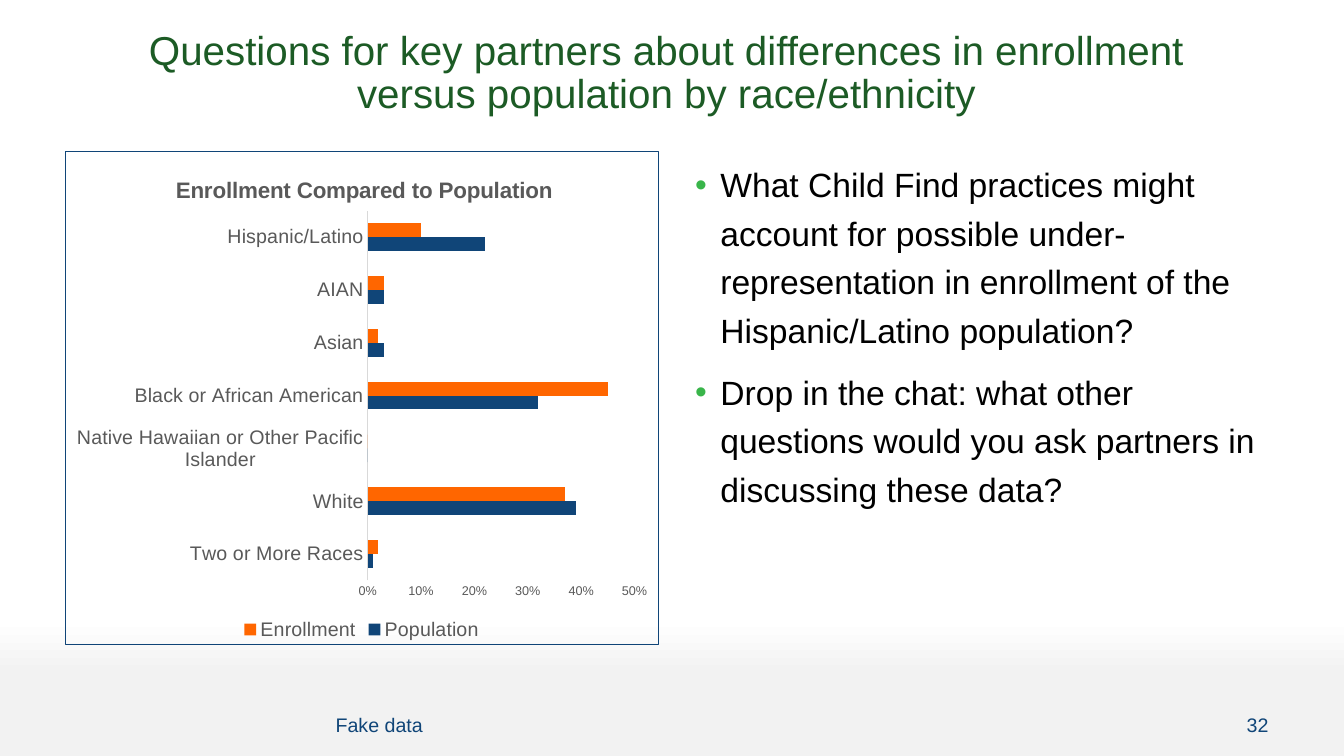
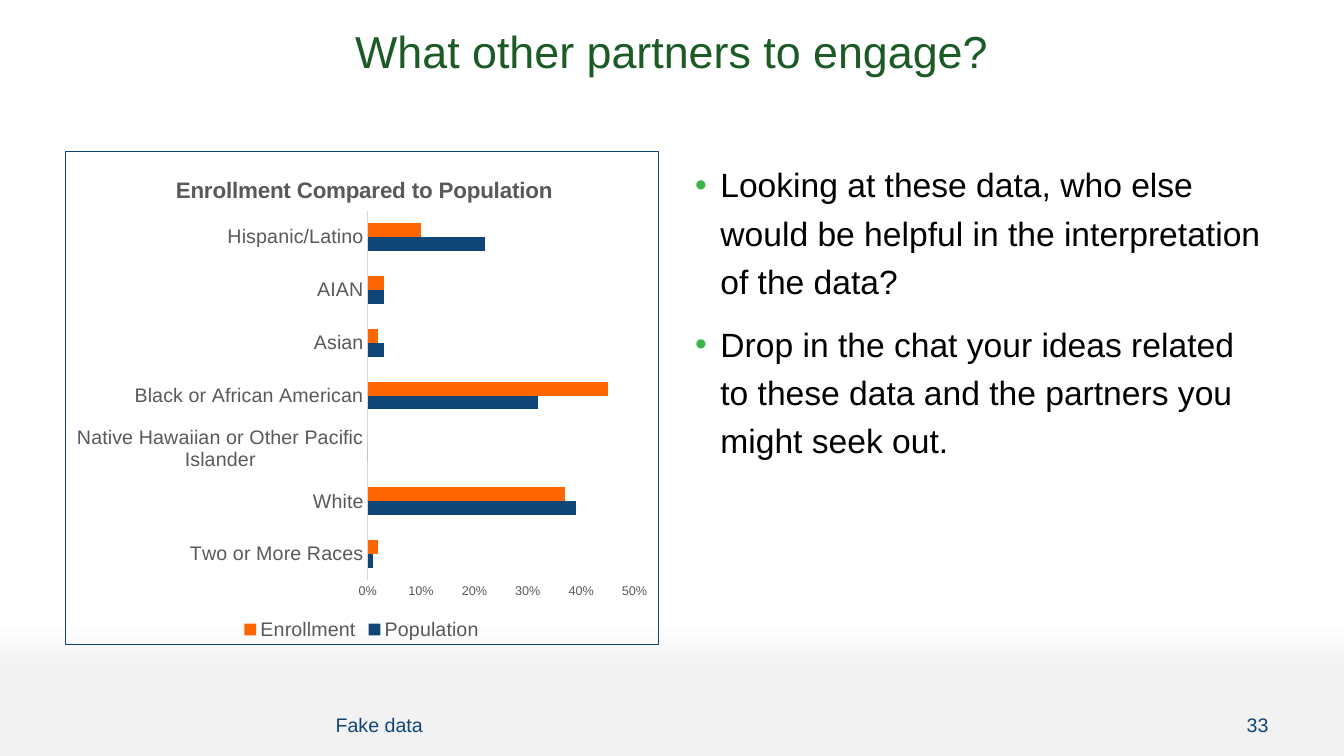
from pptx import Presentation
from pptx import util as u
from pptx.chart.data import CategoryChartData
from pptx.dml.color import RGBColor
from pptx.enum import chart as ch, text as tx
from pptx.oxml import parse_xml
from pptx.oxml.ns import nsdecls, qn

# Shared look
FONT = "Arial"
BLACK = RGBColor(0, 0, 0)
WHITE = RGBColor(0xFF, 0xFF, 0xFF)
MIST = RGBColor(0xF2, 0xF2, 0xF2)
GREEN = RGBColor(0x1C, 0x5B, 0x25)
LEAF = RGBColor(0x39, 0xB5, 0x4A)
NAVY = RGBColor(0x10, 0x45, 0x78)
FLAME = RGBColor(0xFF, 0x66, 0x00)
GREY = RGBColor(0x59, 0x59, 0x59)
RULE = RGBColor(0xD9, 0xD9, 0xD9)

# Grid in inches: two equal columns between the side margins
WIDE, HIGH = 13.33, 7.5
EDGE, GAP = 0.64, 0.26
SPAN = WIDE - 2 * EDGE
COL = (SPAN - GAP) / 2
HEAD = (EDGE, 0.25, SPAN, 0.98)
LEFT = (EDGE, 1.5, COL, 4.9)
RIGHT = (EDGE + COL + GAP, 1.5, COL, 4.9)
NOTE = (3.23, 6.91, 8.1, 0.55)
PAGE = (11.33, 6.91, 1.35, 0.55)

# Chart data
CATS = ["Two or More Races", "White",
        "Native Hawaiian or Other Pacific Islander",
        "Black or African American", "Asian", "AIAN", "Hispanic/Latino"]
SERIES = [
    ("Population", NAVY, [0.01, 0.39, 0, 0.32, 0.03, 0.03, 0.22]),
    ("Enrollment", FLAME, [0.02, 0.37, 0, 0.45, 0.02, 0.03, 0.1]),
]

# Slide texts: number, title, title size, bullets
SLIDES = [
    (32, "Questions for key partners about differences in enrollment \v"
         "versus population by race/ethnicity ", 28.8,
     ["What Child Find practices might account for possible "
      "under-representation in enrollment of the Hispanic/Latino population?",
      "Drop in the chat: what other questions would you ask partners in "
      "discussing these data?"]),
    (33, "What other partners to engage?", 32,
     ["Looking at these data, who else would be helpful in the "
      "interpretation of the data?",
      "Drop in the chat your ideas related to these data and the partners "
      "you might seek out."]),
]


def inches(box):
    return [u.Inches(n) for n in box]


def style(font, size, color, bold=False):
    font.name, font.size, font.bold = FONT, u.Pt(size), bold
    font.color.rgb = color


def move(shape, box):
    shape.left, shape.top, shape.width, shape.height = inches(box)


def frame(shape, anchor):
    area = shape.text_frame
    area.word_wrap = True
    area.auto_size = tx.MSO_AUTO_SIZE.NONE
    area.vertical_anchor = anchor
    return area


def backdrop(master):
    fill = master.background.fill
    fill.gradient()
    fill.gradient_angle = 270
    for stop, color, pos in zip(fill.gradient_stops, (WHITE, MIST),
                                (0.82, 0.89)):
        stop.color.rgb, stop.position = color, pos


def title(slide, box, words, size):
    shape = slide.shapes.title
    move(shape, box)
    area = frame(shape, tx.MSO_ANCHOR.TOP)
    area.text = words
    para = area.paragraphs[0]
    para.alignment, para.line_spacing = tx.PP_ALIGN.CENTER, 0.9
    style(para.font, size, GREEN)


def bullets(slide, box, lines):
    shape = slide.placeholders[1]
    move(shape, box)
    area = frame(shape, tx.MSO_ANCHOR.TOP)
    area.text = "\n".join(lines)
    for para in area.paragraphs:
        para.line_spacing, para.space_before = 1.2, u.Pt(10)
        style(para.font, 24, BLACK)
        # Hanging green bullet
        props = para._p.get_or_add_pPr()
        props.set("marL", str(u.Inches(0.25)))
        props.set("indent", str(u.Inches(-0.25)))
        for tag in (f'<a:buClr {nsdecls("a")}><a:srgbClr val="{LEAF}"/></a:buClr>',
                    f'<a:buFont {nsdecls("a")} typeface="{FONT}"/>',
                    f'<a:buChar {nsdecls("a")} char="•"/>'):
            mark = parse_xml(tag)
            props.insert_element_before(mark, "a:tabLst", "a:defRPr", "a:extLst")


def label(slide, box, words, align):
    area = frame(slide.shapes.add_textbox(*inches(box)), tx.MSO_ANCHOR.MIDDLE)
    area.text = words
    para = area.paragraphs[0]
    para.alignment = align
    style(para.font, 14, NAVY)


def layout(node, index, **parts):
    """Place a chart part by shares of the chart's size."""
    for old in node.findall(qn("c:layout")):
        node.remove(old)
    rows = [("layoutTarget", "inner")] if "w" in parts else []
    rows += [("xMode", "edge"), ("yMode", "edge"), *parts.items()]
    body = "".join(f'<c:{key} val="{val}"/>' for key, val in rows)
    node.insert(index, parse_xml(
        f'<c:layout {nsdecls("c")}><c:manualLayout>{body}'
        '</c:manualLayout></c:layout>'))


def bars(slide, box):
    data = CategoryChartData(number_format="0%")
    data.categories = CATS
    for name, _, vals in SERIES:
        data.add_series(name, vals)
    chart = slide.shapes.add_chart(ch.XL_CHART_TYPE.BAR_CLUSTERED,
                                   *inches(box), data).chart
    style(chart.font, 10, BLACK)

    # Bars
    plot = chart.plots[0]
    plot.gap_width, plot.overlap, plot.vary_by_categories = 182, 0, False
    for series, (_, color, _) in zip(plot.series, SERIES):
        series.format.fill.solid()
        series.format.fill.fore_color.rgb = color

    # Title and legend
    chart.has_title = True
    chart.chart_title.include_in_layout = False
    area = chart.chart_title.text_frame
    area.text = "Enrollment Compared to Population"
    style(area.paragraphs[0].font, 16, GREY, True)
    chart.has_legend = True
    chart.legend.position = ch.XL_LEGEND_POSITION.BOTTOM
    chart.legend.include_in_layout = False
    style(chart.legend.font, 14, GREY)

    # Axes
    cat, val = chart.category_axis, chart.value_axis
    for axis, size in ((cat, 14), (val, 9)):
        axis.has_major_gridlines = False
        axis.major_tick_mark = axis.minor_tick_mark = ch.XL_TICK_MARK.NONE
        style(axis.tick_labels.font, size, GREY)
    cat.format.line.color.rgb = RULE
    cat.format.line.width = u.Pt(0.75)
    val.format.line.fill.background()
    val.minimum_scale, val.maximum_scale, val.major_unit = 0, 0.5, 0.1
    val.tick_labels.number_format = "0%"
    val.tick_labels.number_format_is_linked = False

    # Placement and border
    root = chart.element.find(qn("c:chart"))
    layout(root.find(qn("c:title")), 1, x=0.18, y=0.04)
    layout(root.find(qn("c:plotArea")), 0, x=0.51, y=0.12, w=0.45, h=0.75)
    root.addnext(parse_xml(
        f'<c:spPr {nsdecls("c", "a")}><a:noFill/><a:ln w="{u.Pt(0.75)}">'
        f'<a:solidFill><a:srgbClr val="{NAVY}"/></a:solidFill></a:ln></c:spPr>'))


def build(deck, page, words, size, lines):
    slide = deck.slides.add_slide(deck.slide_layouts[1])
    title(slide, HEAD, words, size)
    bars(slide, LEFT)
    bullets(slide, RIGHT, lines)
    label(slide, NOTE, "Fake data", tx.PP_ALIGN.LEFT)
    label(slide, PAGE, str(page), tx.PP_ALIGN.RIGHT)


def main():
    deck = Presentation()
    deck.slide_width, deck.slide_height = u.Inches(WIDE), u.Inches(HIGH)
    backdrop(deck.slide_master)
    for item in SLIDES:
        build(deck, *item)
    deck.save("out.pptx")


if __name__ == "__main__":
    main()
